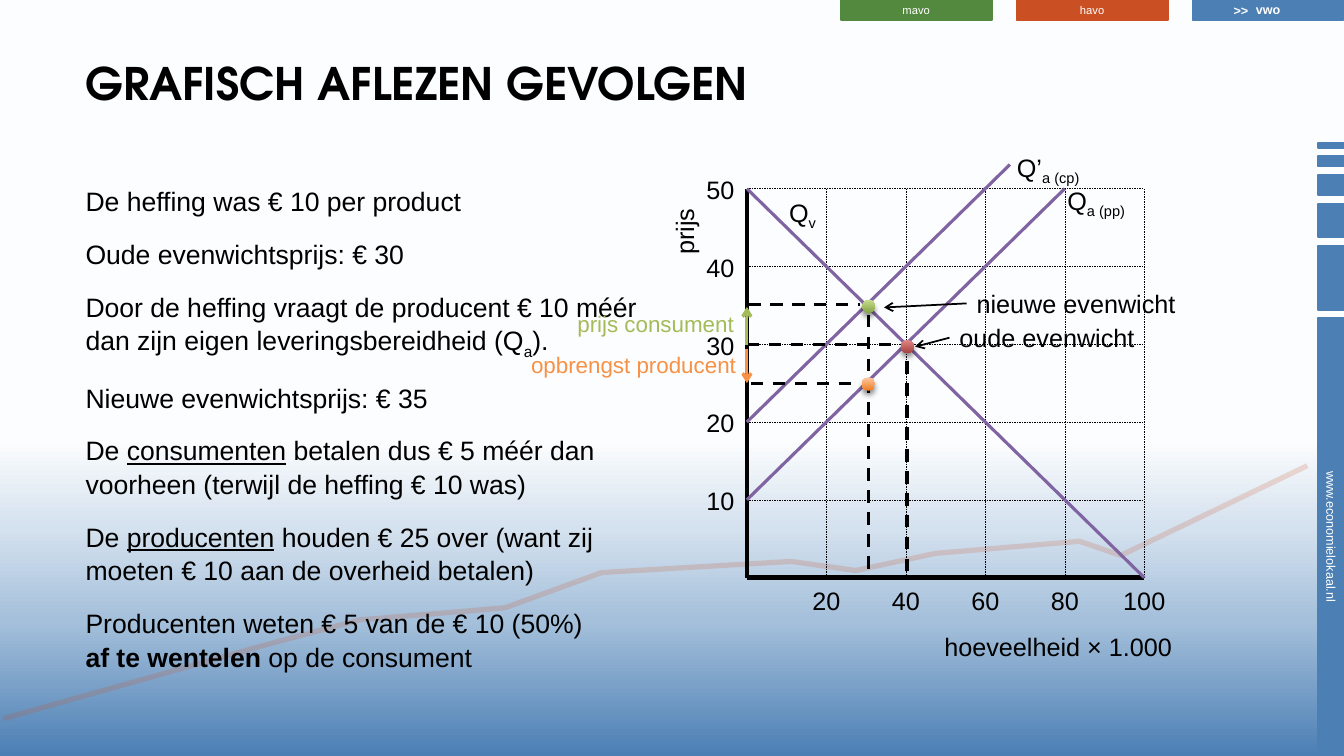
"""Builds a Dutch economics slide on reading the effects of a levy from a supply and demand graph."""
from copy import deepcopy
from dataclasses import dataclass
from typing import NamedTuple

from pptx import Presentation
from pptx import util as u
from pptx.dml.color import RGBColor
from pptx.enum import dml, shapes, text
from pptx.oxml.ns import qn
from pptx.oxml.xmlchemy import OxmlElement

BLACK, WHITE = RGBColor(0, 0, 0), RGBColor(255, 255, 255)
BLUE, RED, GREEN = RGBColor(0x4C, 0x7F, 0xB4), RGBColor(0xCA, 0x4F, 0x22), RGBColor(0x52, 0x89, 0x3F)
PURPLE, LIME, ORANGE = RGBColor(0x80, 0x64, 0xA2), RGBColor(0xA3, 0xBB, 0x59), RGBColor(0xF7, 0x91, 0x46)
SKY = [(0, BLUE), (18, RGBColor(0xA5, 0xC0, 0xDB)), (30, RGBColor(0xD4, 0xE1, 0xEE)),
       (42, RGBColor(0xFC, 0xFD, 0xFE)), (50, WHITE)]
LIME_BALL = [(0, RGBColor(0xC9, 0xDD, 0x90)), (100, RGBColor(0x86, 0xA5, 0x47))]
ORANGE_BALL = [(0, RGBColor(0xFF, 0xC9, 0xA4)), (100, RGBColor(0xEE, 0x7E, 0x22))]
RED_BALL = [(0, RGBColor(0xE1, 0x87, 0x85)), (100, RGBColor(0xA7, 0x42, 0x3F))]

CELL = u.Inches(1) / 12
COLS, ROWS = 160, 90
PLOT_LEFT, PLOT_BOTTOM = 88.92, 68.76
PLOT_COL, PLOT_ROW = 9.46, 9.26
SIDE_WIDTH, SIDE_GAP = 3.12, 1.02


class Run(NamedTuple):
    text: str
    style: str = ""


@dataclass
class Label:
    runs: list[Run]
    left: float
    top: float
    width: float
    size: float = 18
    color: RGBColor = BLACK
    rotation: float = 0
    align: text.PP_ALIGN = text.PP_ALIGN.LEFT


@dataclass
class Segment:
    start: tuple[float, float]
    end: tuple[float, float]
    color: RGBColor = BLACK
    weight: float = 2.25
    dashed: bool = False
    arrow: bool = False


class Block(NamedTuple):
    left: float
    top: float
    width: float
    height: float
    color: RGBColor
    caption: str = ""
    size: float = 9
    bold: bool = False
    rotation: float = 0


class Ball(NamedTuple):
    center: tuple[float, float]
    stops: list


def cells(*counts: float) -> list[u.Emu]:
    return [u.Emu(round(n * CELL)) for n in counts]


def at(quantity: float, price: float) -> tuple[float, float]:
    return PLOT_LEFT + quantity / 20 * PLOT_COL, PLOT_BOTTOM - price / 10 * PLOT_ROW


def child(parent, tag: str, **attrs):
    el = OxmlElement(tag)
    for name, value in attrs.items():
        el.set(name, str(value))
    parent.append(el)
    return el


def paint_gradient(fill, root, stops: list, angle: float) -> None:
    fill.gradient()
    fill.gradient_angle = angle
    gs_list = root.find(".//" + qn("a:gsLst"))
    template = deepcopy(gs_list[0])
    for gs in list(gs_list):
        gs_list.remove(gs)
    for position, color in stops:
        gs = deepcopy(template)
        gs.set("pos", str(position * 1000))
        for old in list(gs):
            gs.remove(old)
        child(gs, "a:srgbClr", val=color)
        gs_list.append(gs)


def write(p, runs: list[Run], size: float, color: RGBColor, font: str = "Arial", bold: bool = False) -> None:
    for part in runs:
        if part.style == "break":
            p.add_line_break()
            continue
        r = p.add_run()
        r.text = part.text
        if part.style == "sub":
            r.font._element.set("baseline", "-25000")
        elif part.style == "underline":
            r.font.underline = True
        elif part.style == "bold":
            r.font.bold = True
    p.font.name, p.font.size, p.font.color.rgb = font, u.Pt(size), color
    if bold:
        p.font.bold = True


def draw_label(s, label: Label, bold: bool = False) -> None:
    sp = s.shapes.add_textbox(*cells(label.left, label.top, label.width, label.size / 4 + 0.4))
    sp.rotation = label.rotation
    tf = sp.text_frame
    tf.word_wrap, tf.auto_size = False, text.MSO_AUTO_SIZE.SHAPE_TO_FIT_TEXT
    tf.paragraphs[0].alignment = label.align
    write(tf.paragraphs[0], label.runs, label.size, label.color, bold=bold)


def draw_block(s, block: Block) -> None:
    sp = s.shapes.add_shape(shapes.MSO_SHAPE.RECTANGLE, *cells(*block[:4]))
    sp.shadow.inherit = False
    sp.rotation = block.rotation
    sp.fill.solid()
    sp.fill.fore_color.rgb = sp.line.color.rgb = block.color
    sp.line.width = u.Pt(1.25)
    if block.caption:
        tf = sp.text_frame
        tf.margin_top, tf.margin_bottom = 0, u.Inches(0.01)
        tf.vertical_anchor = text.MSO_ANCHOR.MIDDLE
        tf.paragraphs[0].alignment = text.PP_ALIGN.CENTER
        write(tf.paragraphs[0], [Run(block.caption)], block.size, WHITE, bold=block.bold)


def draw_segment(s, seg: Segment) -> None:
    line = s.shapes.add_connector(shapes.MSO_CONNECTOR.STRAIGHT, *cells(*seg.start, *seg.end))
    line.line.color.rgb, line.line.width = seg.color, u.Pt(seg.weight)
    if seg.dashed:
        line.line.dash_style = dml.MSO_LINE.DASH
    if seg.arrow:
        child(line.line._get_or_add_ln(), "a:tailEnd", type="arrow")
    child(line._element.spPr, "a:effectLst")


def draw_ball(s, ball: Ball, size: float = 1.56) -> None:
    x, y = ball.center
    sp = s.shapes.add_shape(shapes.MSO_SHAPE.OVAL, *cells(x - size / 2, y - size / 2, size, size))
    paint_gradient(sp.fill, sp._element, ball.stops, 270)
    sp.line.fill.background()
    effects = child(sp._element.spPr, "a:effectLst")
    shadow = child(effects, "a:outerShdw", blurRad=u.Pt(4), dist=u.Pt(3), dir=5400000, rotWithShape=0)
    child(child(shadow, "a:srgbClr", val=BLACK), "a:alpha", val=46000)


def draw_frame(s) -> None:
    paint_gradient(s.background.fill, s._element, SKY, 90)
    top = 17.0
    for length in (0.6, 1.2, 2.4, 4, 7.6, 52):
        caption = "www.economielokaal.nl" if length == 52 else ""
        left = COLS - (SIDE_WIDTH + length) / 2
        draw_block(s, Block(left, top + (length - SIDE_WIDTH) / 2, length, SIDE_WIDTH, BLUE, caption, rotation=90))
        top += length + SIDE_GAP
    tabs = [("mavo", GREEN, 8, False), ("havo", RED, 8, False), ("vwo", BLUE, 9, True)]
    for i, (caption, color, size, bold) in enumerate(tabs):
        draw_block(s, Block(100.08 + 20.94 * i, 0, 18, 2.4, color, caption, size, bold))
    trend = [(155.64, 55.44), (133.44, 66.12), (128.52, 64.44), (111.36, 65.88), (101.88, 67.92), (94.2, 66.84),
             (71.64, 68.16), (60.12, 72.36), (42.84, 73.8), (32.4, 76.56), (0.36, 85.56)]
    builder = s.shapes.build_freeform(*cells(*trend[0]))
    builder.add_line_segments([cells(*point) for point in trend[1:]], close=False)
    sp = builder.convert_to_shape()
    sp.shadow.inherit = False
    sp.fill.background()
    sp.line.color.rgb, sp.line.width = RED, u.Pt(3.75)
    child(sp._element.spPr.find(".//" + qn("a:srgbClr")), "a:alpha", val=19000)
    draw_label(s, Label([Run(">>")], 145.68, -0.24, 4.2, 9, WHITE), bold=True)


def draw_text(s) -> None:
    tf = s.shapes.add_textbox(*cells(9, 6, 120.24, 10.68)).text_frame
    tf.word_wrap = True
    write(tf.paragraphs[0], [Run("GRAFISCH AFLEZEN GEVOLGEN")], 32, BLACK, "TeX Gyre Adventor", True)
    body = [
        [Run("De heffing was € 10 per product")],
        [Run("Oude evenwichtsprijs: € 30")],
        [Run("Door de heffing vraagt de producent € 10 méér dan zijn eigen leveringsbereidheid (Q"),
         Run("a", "sub"), Run(").")],
        [Run("Nieuwe evenwichtsprijs: € 35")],
        [Run("De "), Run("consumenten", "underline"),
         Run(" betalen dus € 5 méér dan voorheen (terwijl de heffing € 10 was)")],
        [Run("De "), Run("producenten", "underline"),
         Run(" houden € 25 over (want zij moeten € 10 aan de overheid betalen)")],
        [Run("Producenten weten € 5 van de € 10 (50%)"), Run("", "break"),
         Run("af te wentelen", "bold"), Run(" op de consument")],
    ]
    tf = s.shapes.add_textbox(*cells(9, 21.24, 69.36, 61.8)).text_frame
    tf.word_wrap = True
    for i, runs in enumerate(body):
        p = tf.add_paragraph() if i else tf.paragraphs[0]
        p.space_before, p.space_after, p.line_spacing = u.Pt(3.8 if i else 0), u.Pt(10), 1.05
        write(p, runs, 19, BLACK)


def draw_graph(s) -> None:
    prices, quantities = range(10, 51, 10), range(20, 101, 20)
    segments = [Segment(at(0, 50), at(0, 0), weight=3), Segment(at(100, 0), at(0, 0), weight=3)]
    segments += [Segment(at(0, n), at(100, n), weight=0.25, dashed=True) for n in prices]
    segments += [Segment(at(n, 50), at(n, 0), weight=0.25, dashed=True) for n in quantities]
    curves = [((0, 50), (100, 0)), ((0, 10), (80, 50)), ((0, 20), (66.2, 53.1))]
    segments += [Segment(at(*a), at(*b), PURPLE) for a, b in curves]
    guides = [((0, 30), (40, 30)), ((0.3, 35.1), (28.4, 35.1)), ((1, 24.9), (28.4, 24.9)),
              ((40.3, 27.8), (40.3, 0)), ((30.7, 33.8), (30.7, 0))]
    segments += [Segment(at(*a), at(*b), dashed=True) for a, b in guides]
    segments += [Segment((113.04, 40.2), (108.96, 41.28), weight=1.25, arrow=True),
                 Segment((115.08, 36.12), (105.24, 36.6), weight=1.25, arrow=True),
                 Segment(at(0, 29.9), at(0, 34.8), LIME, arrow=True),
                 Segment(at(0, 29.4), at(0, 25), ORANGE, arrow=True)]
    for seg in segments:
        draw_segment(s, seg)
    balls = [Ball(at(30.7, 34.9), LIME_BALL), Ball(at(30.6, 24.9), ORANGE_BALL), Ball(at(40.4, 29.7), RED_BALL)]
    for ball in balls:
        draw_ball(s, ball)
    labels = [Label([Run(str(n))], 82.92, at(0, n)[1] - 2.3, 5.76) for n in prices]
    labels += [Label([Run(str(n))], at(n, 0)[0] - 3.72, 69.12, 7.44, align=text.PP_ALIGN.CENTER)
               for n in quantities]
    labels += [Label([Run("hoeveelheid × 1.000")], 111.24, 74.52, 29.76),
               Label([Run("prijs")], 77.52, 25.08, 7.92, rotation=270),
               Label([Run("Q"), Run("v", "sub")], 92.76, 22.92, 5.76),
               Label([Run("Q"), Run("a (pp)", "sub")], 125.88, 21.48, 10.08),
               Label([Run("Q’"), Run("a (cp)", "sub")], 119.88, 17.52, 10.56),
               Label([Run("oude evenwicht")], 113.04, 37.8, 23.52),
               Label([Run("nieuwe evenwicht")], 115.08, 33.72, 26.28),
               Label([Run("prijs consument")], 67.56, 36.36, 21.6, 16, LIME),
               Label([Run("opbrengst producent")], 62.04, 41.16, 27.12, 16, ORANGE)]
    for label in labels:
        draw_label(s, label)


def main() -> None:
    prs = Presentation()
    prs.slide_width, prs.slide_height = cells(COLS, ROWS)
    s = prs.slides.add_slide(prs.slide_layouts[6])
    draw_frame(s)
    draw_text(s)
    draw_graph(s)
    prs.save("out.pptx")


if __name__ == "__main__":
    main()
